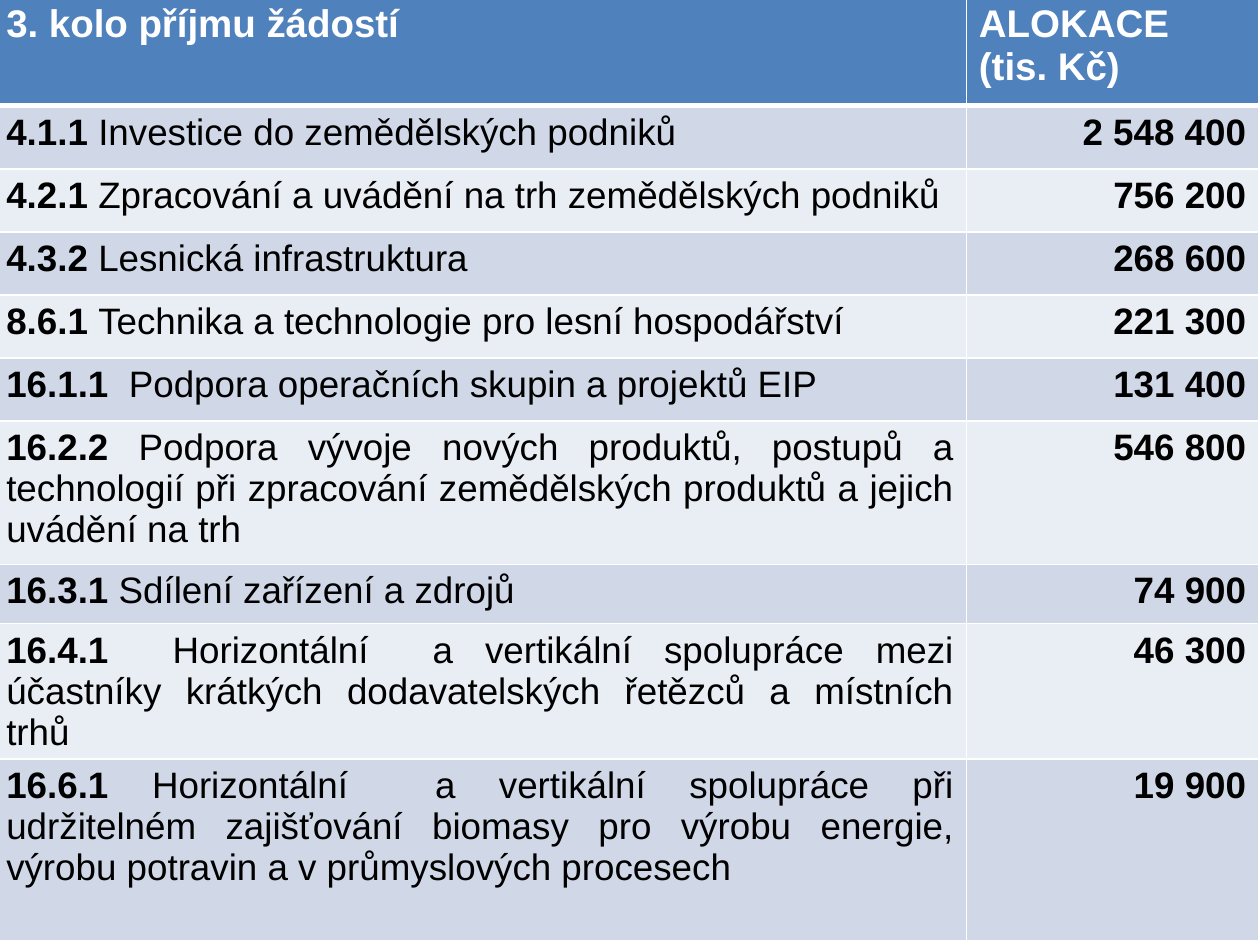
from lxml import etree
from pptx import Presentation
from pptx.dml.color import RGBColor
from pptx.enum.text import PP_ALIGN
from pptx.oxml.ns import qn
from pptx.util import Inches, Pt

LEFT, RIGHT, JUSTIFY = PP_ALIGN.LEFT, PP_ALIGN.RIGHT, PP_ALIGN.JUSTIFY

COLORS = {
    "header": "4F81BD",
    "band_dark": "D0D8E8",
    "band_light": "E9EDF4",
    "border": "FFFFFF",
    "header_text": "FFFFFF",
    "body_text": "000000",
}

HEADINGS = ["3. kolo příjmu žádostí", "ALOKACE (tis. Kč)"]
OPERATIONS = [
    ("4.1.1 ", "Investice do zemědělských podniků", "2 548 400", 0.5),
    ("4.2.1 ", "Zpracování a uvádění na trh zemědělských podniků", "756 200", 0.5),
    ("4.3.2 ", "Lesnická infrastruktura", "268 600", 0.5),
    ("8.6.1 ", "Technika a technologie pro lesní hospodářství", "221 300", 0.5),
    ("16.1.1  ", "Podpora operačních skupin a projektů EIP", "131 400", 0.5),
    ("16.2.2 ", "Podpora vývoje nových produktů, postupů a technologií při "
     "zpracování zemědělských produktů a jejich uvádění na trh", "546 800", 1.14),
    ("16.3.1 ", "Sdílení zařízení a zdrojů", "74 900", 0.47),
    ("16.4.1  ", "Horizontální  a vertikální spolupráce mezi účastníky "
     "krátkých dodavatelských řetězců a místních trhů", "46 300", 1.07),
    ("16.6.1 ", "Horizontální  a vertikální spolupráce při udržitelném zajišťování "
     "biomasy pro výrobu energie, výrobu potravin a v průmyslových procesech",
     "19 900", 1.44),
]
COLUMN_WIDTHS = [7.72, 2.32]
HEADER_HEIGHT = 0.87


def add_text(paragraph, text, size=21, color="body_text", bold=True, align=LEFT):
    paragraph.alignment = align
    run = paragraph.add_run()
    run.text = text
    run.font.name = "Arial"
    run.font.size = Pt(size)
    run.font.bold = bold
    run.font.color.rgb = RGBColor.from_string(COLORS[color])


class AllocationSlide:
    def __init__(self, presentation):
        self.slide = presentation.slides.add_slide(presentation.slide_layouts[6])

    def add_table(self, left, top, widths, heights):
        table = self.slide.shapes.add_table(
            len(heights), len(widths), Inches(left), Inches(top),
            Inches(sum(widths)), Inches(sum(heights))).table
        for column, width in zip(table.columns, widths):
            column.width = Inches(width)
        for row, height in zip(table.rows, heights):
            row.height = Inches(height)
        return table

    def style_cell(self, cell, fill, top_width=1, bottom_width=1):
        properties = cell._tc.get_or_add_tcPr()
        edges = {"a:lnL": 1, "a:lnR": 1, "a:lnT": top_width, "a:lnB": bottom_width}
        for edge, width in edges.items():
            line = etree.SubElement(properties, qn(edge), w=str(Pt(width)))
            solid = etree.SubElement(line, qn("a:solidFill"))
            etree.SubElement(solid, qn("a:srgbClr"), val=COLORS["border"])
        cell.fill.solid()
        cell.fill.fore_color.rgb = RGBColor.from_string(COLORS[fill])

    def add_header(self, table):
        for column, heading in enumerate(HEADINGS):
            cell = table.cell(0, column)
            self.style_cell(cell, "header", bottom_width=3)
            add_text(cell.text_frame.paragraphs[0], heading, size=22, color="header_text")

    def add_operation(self, table, row, code, name, amount):
        fill = "band_dark" if row % 2 else "band_light"
        operation, allocation = table.cell(row, 0), table.cell(row, 1)
        for cell in (operation, allocation):
            self.style_cell(cell, fill, top_width=3 if row == 1 else 1)
        description = operation.text_frame.paragraphs[0]
        add_text(description, code, align=JUSTIFY)
        add_text(description, name, bold=False, align=JUSTIFY)
        add_text(allocation.text_frame.paragraphs[0], amount, align=RIGHT)


def main():
    presentation = Presentation()
    presentation.slide_width = Inches(10)
    presentation.slide_height = Inches(7.5)
    allocation_slide = AllocationSlide(presentation)
    heights = [HEADER_HEIGHT] + [height for *_, height in OPERATIONS]
    table = allocation_slide.add_table(-0.05, -0.03, COLUMN_WIDTHS, heights)
    allocation_slide.add_header(table)
    for row, (code, name, amount, _) in enumerate(OPERATIONS, start=1):
        allocation_slide.add_operation(table, row, code, name, amount)
    presentation.save("out.pptx")


if __name__ == "__main__":
    main()
